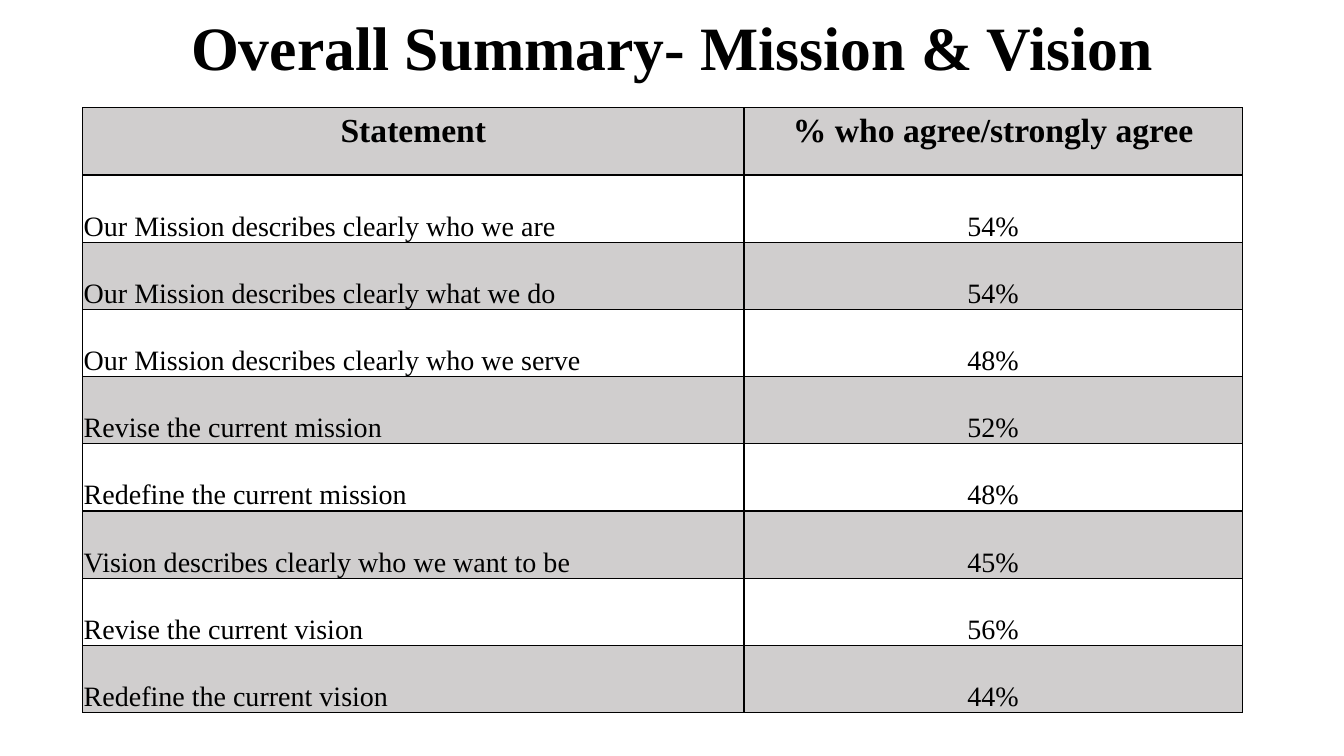
from dataclasses import dataclass

from lxml import etree
from pptx import Presentation
from pptx.dml.color import RGBColor
from pptx.enum.text import MSO_ANCHOR, PP_ALIGN
from pptx.util import Inches, Pt

LEFT, CENTER = PP_ALIGN.LEFT, PP_ALIGN.CENTER
TOP, MIDDLE, BOTTOM = MSO_ANCHOR.TOP, MSO_ANCHOR.MIDDLE, MSO_ANCHOR.BOTTOM
DRAWING_NS = "http://schemas.openxmlformats.org/drawingml/2006/main"
BLANK_LAYOUT = 6


@dataclass(frozen=True)
class Theme:
    font: str = "Times New Roman"
    ink: str = "000000"
    paper: str = "FFFFFF"
    band: str = "D0CECE"
    title_size: int = 44
    header_size: int = 24
    body_size: int = 20
    border_width: int = 1


THEME = Theme()

TITLE = "Overall Summary- Mission & Vision"
HEADINGS = ("Statement", "% who agree/strongly agree")
RESULTS = [
    ("Our Mission describes clearly who we are", "54%"),
    ("Our Mission describes clearly what we do", "54%"),
    ("Our Mission describes clearly who we serve", "48%"),
    ("Revise the current mission", "52%"),
    ("Redefine the current mission", "48%"),
    ("Vision describes clearly who we want to be", "45%"),
    ("Revise the current vision", "56%"),
    ("Redefine the current vision", "44%"),
]


def write(text_frame, text, size, bold, align):
    paragraph = text_frame.paragraphs[0]
    paragraph.text = text
    paragraph.alignment = align
    font = paragraph.runs[0].font
    font.name = THEME.font
    font.size = Pt(size)
    font.bold = bold
    font.color.rgb = RGBColor.from_string(THEME.ink)
    return paragraph


def add_borders(cell):
    """Rule all four sides; the lines must precede the fill in the cell XML."""
    properties = cell._tc.get_or_add_tcPr()
    for index, side in enumerate(("lnL", "lnR", "lnT", "lnB")):
        line = etree.Element(f"{{{DRAWING_NS}}}{side}", w=str(Pt(THEME.border_width)))
        fill = etree.SubElement(line, f"{{{DRAWING_NS}}}solidFill")
        etree.SubElement(fill, f"{{{DRAWING_NS}}}srgbClr", val=THEME.ink)
        properties.insert(index, line)


def add_title(slide, left, top, width, height):
    title = slide.shapes.add_textbox(left, top, width, height)
    title.text_frame.word_wrap = True
    title.text_frame.vertical_anchor = MIDDLE
    paragraph = write(title.text_frame, TITLE, THEME.title_size, True, CENTER)
    paragraph.line_spacing = 0.9


def style_cell(cell, text, is_header, align, color):
    if is_header:
        cell.vertical_anchor = TOP
    else:
        cell.vertical_anchor = BOTTOM
        cell.margin_left = cell.margin_right = cell.margin_top = Inches(0.01)
        cell.margin_bottom = 0
    size = THEME.header_size if is_header else THEME.body_size
    write(cell.text_frame, text, size, is_header, align)
    cell.fill.solid()
    cell.fill.fore_color.rgb = RGBColor.from_string(color)
    add_borders(cell)


def add_results_table(slide, left, top, width, height):
    rows = [HEADINGS, *RESULTS]
    table = slide.shapes.add_table(len(rows), len(HEADINGS), left, top, width, height).table
    statement_width = Inches(6.56)
    table.columns[0].width = statement_width
    table.columns[1].width = width - statement_width
    for row_index, row in enumerate(rows):
        is_header = row_index == 0
        color = THEME.paper if row_index % 2 else THEME.band
        for column_index, text in enumerate(row):
            align = CENTER if is_header or column_index else LEFT
            style_cell(table.cell(row_index, column_index), text, is_header, align, color)


def main():
    presentation = Presentation()
    presentation.slide_width = Inches(13.33)
    presentation.slide_height = Inches(7.5)
    slide = presentation.slides.add_slide(presentation.slide_layouts[BLANK_LAYOUT])
    add_title(slide, Inches(0.92), Inches(0.09), Inches(11.5), Inches(0.83))
    add_results_table(slide, Inches(0.82), Inches(1.07), Inches(11.5), Inches(6))
    presentation.save("out.pptx")


if __name__ == "__main__":
    main()
